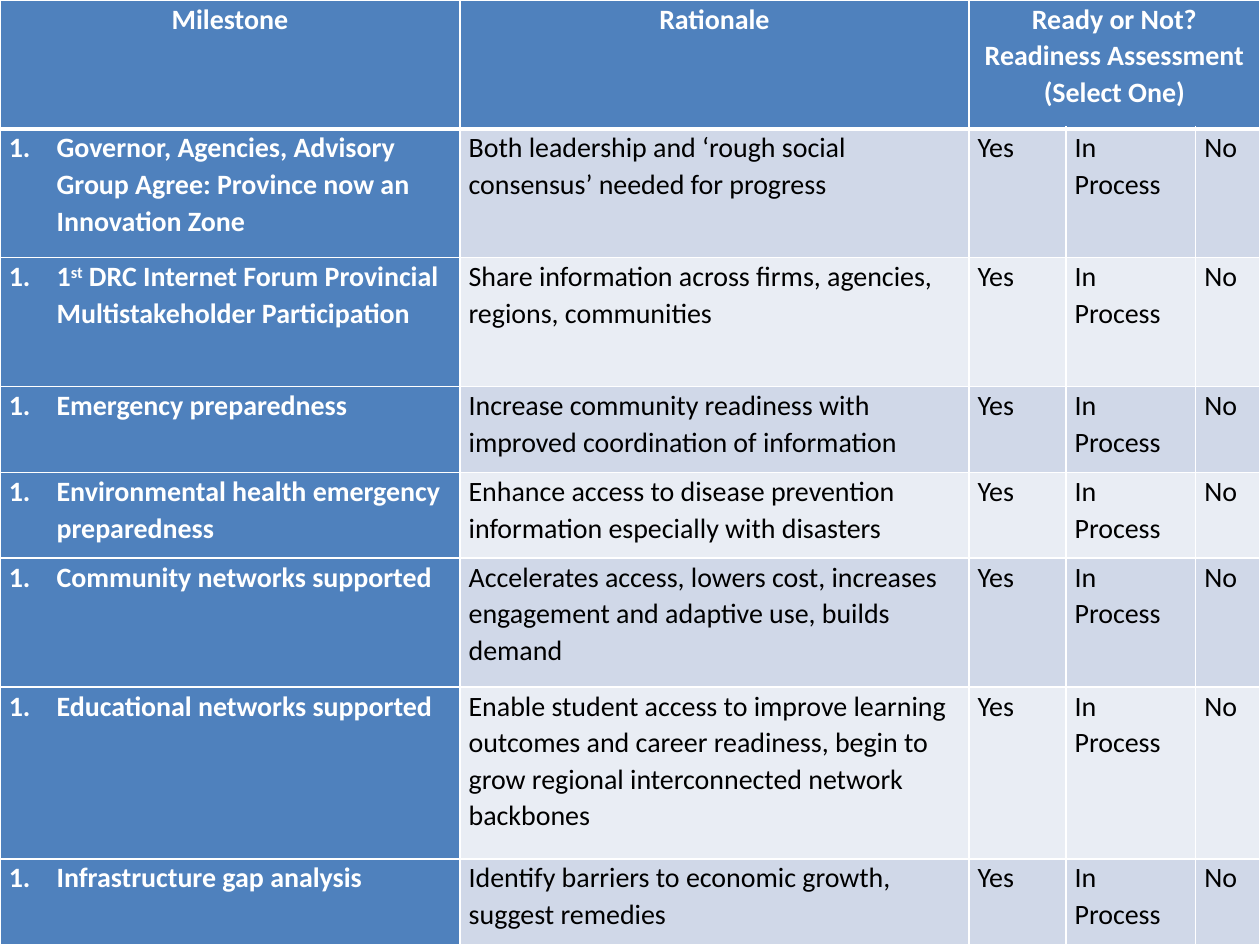
from lxml.etree import SubElement
from pptx import Presentation
from pptx.dml.color import RGBColor
from pptx.enum.text import PP_ALIGN as Align
from pptx.oxml.ns import qn
from pptx.util import Inches, Pt

COLORS = {
    "header": "4F81BD",
    "odd_band": "D0D8E8",
    "even_band": "E9EDF4",
    "border": "FFFFFF",
    "light_text": "FFFFFF",
    "dark_text": "000000",
}
SLIDE_WIDTH, SLIDE_HEIGHT = 10, 7.5
COLUMN_WIDTHS = [3.65, 4.04, 0.77, 1.03, 0.51]
ROW_LINES = [3, 3, 3, 2, 2, 3, 4, 2]
HEADERS = [
    ["Milestone"],
    ["Rationale"],
    ["Ready or Not?", "Readiness Assessment", "(Select One)"],
]
ANSWERS = ["Yes", "In Process", "No"]
MILESTONES = [
    (["Governor, Agencies, Advisory Group Agree: Province now an Innovation Zone"],
     "Both leadership and ‘rough social consensus’ needed for progress"),
    (["1", "st", " DRC Internet Forum Provincial Multistakeholder Participation"],
     "Share information across firms, agencies, regions, communities"),
    (["Emergency preparedness"],
     "Increase community readiness with improved coordination of information"),
    (["Environmental health emergency preparedness"],
     "Enhance access to disease prevention information especially with disasters"),
    (["Community networks supported"],
     "Accelerates access, lowers cost, increases engagement and adaptive use, "
     "builds demand"),
    (["Educational networks supported"],
     "Enable student access to improve learning outcomes and career readiness, "
     "begin to grow regional interconnected network backbones"),
    (["Infrastructure gap analysis"],
     "Identify barriers to economic growth, suggest remedies"),
]


def set_borders(cell, widths):
    """Draw the left, right, top and bottom borders in the given point widths."""
    properties = cell._tc.get_or_add_tcPr()
    for side, width in zip("LRTB", widths):
        line = SubElement(properties, qn(f"a:ln{side}"), w=str(Pt(width)))
        fill = SubElement(line, qn("a:solidFill"))
        SubElement(fill, qn("a:srgbClr"), val=COLORS["border"])


def style_cell(cell, fill, borders):
    """Set the margins, borders and fill of a cell."""
    cell.margin_left = cell.margin_right = Inches(0.07)
    cell.margin_top = cell.margin_bottom = 0
    set_borders(cell, borders)
    cell.fill.solid()
    cell.fill.fore_color.rgb = RGBColor.from_string(COLORS[fill])


def number_paragraph(paragraph):
    """Give a paragraph a number with a hanging indent."""
    properties = paragraph._p.get_or_add_pPr()
    properties.set("marL", str(Inches(0.38)))
    properties.set("indent", str(-Inches(0.38)))
    SubElement(properties, qn("a:buFont"), typeface="+mj-lt")
    SubElement(properties, qn("a:buAutoNum"), type="arabicPeriod")


def write_paragraph(paragraph, texts, color, bold=False, align=Align.LEFT):
    """Add the texts as runs, raising an ordinal suffix."""
    paragraph.alignment = align
    paragraph.line_spacing = 1.07
    for text in texts:
        run = paragraph.add_run()
        run.text = text
        run.font.name = "Calibri"
        run.font.size = Pt(16)
        run.font.bold = bold
        run.font.color.rgb = RGBColor.from_string(COLORS[color])
        if text == "st":
            run.font._element.set("baseline", "30000")


def fill_header(table):
    """Write the header row and merge its assessment columns."""
    for cell in table.rows[0].cells:
        style_cell(cell, "header", (1, 1, 1, 3))
    table.cell(0, 2).merge(table.cell(0, 4))
    for column, lines in enumerate(HEADERS):
        frame = table.cell(0, column).text_frame
        for index, line in enumerate(lines):
            paragraph = frame.add_paragraph() if index else frame.paragraphs[0]
            write_paragraph(paragraph, [line], "light_text", True, Align.CENTER)


def fill_milestone(table, row, milestone, rationale):
    """Write one milestone with its rationale and possible answers."""
    band = "odd_band" if row % 2 else "even_band"
    borders = (1, 1, 3 if row == 1 else 1, 1)
    title_cell, *detail_cells = table.rows[row].cells
    style_cell(title_cell, "header", borders)
    title = title_cell.text_frame.paragraphs[0]
    write_paragraph(title, milestone, "light_text", True)
    number_paragraph(title)
    for cell, text in zip(detail_cells, [rationale, *ANSWERS]):
        style_cell(cell, band, borders)
        write_paragraph(cell.text_frame.paragraphs[0], [text], "dark_text")


def add_milestone_table(slide):
    """Add the full-slide table with rows sized by their line counts."""
    table = slide.shapes.add_table(
        len(ROW_LINES), len(COLUMN_WIDTHS), 0, 0,
        Inches(SLIDE_WIDTH), Inches(SLIDE_HEIGHT)).table
    for column, width in zip(table.columns, COLUMN_WIDTHS):
        column.width = Inches(width)
    for row, lines in zip(table.rows, ROW_LINES):
        row.height = Inches(SLIDE_HEIGHT * lines / sum(ROW_LINES))
    return table


def main():
    """Build and save the milestone readiness slide."""
    presentation = Presentation()
    presentation.slide_width = Inches(SLIDE_WIDTH)
    presentation.slide_height = Inches(SLIDE_HEIGHT)
    slide = presentation.slides.add_slide(presentation.slide_layouts[6])
    table = add_milestone_table(slide)
    fill_header(table)
    for row, (milestone, rationale) in enumerate(MILESTONES, start=1):
        fill_milestone(table, row, milestone, rationale)
    presentation.save("out.pptx")


if __name__ == "__main__":
    main()
